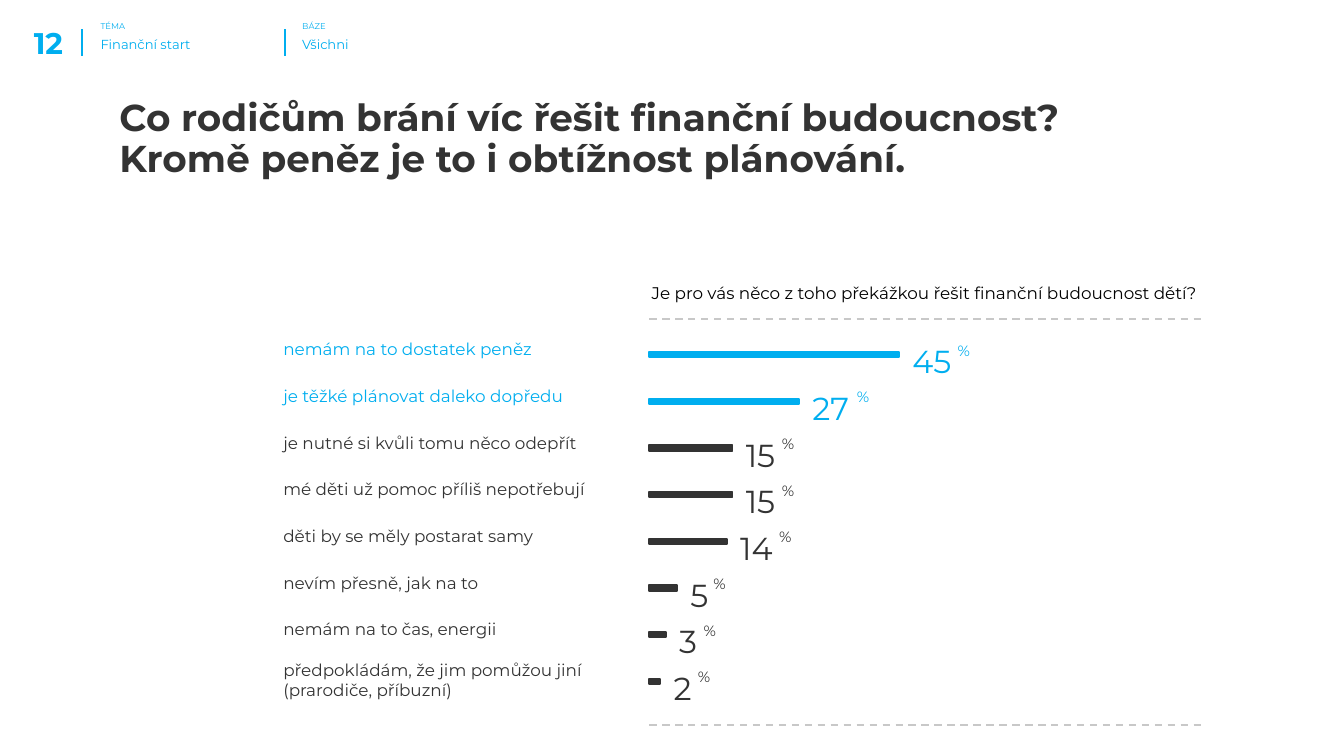
from lxml import etree
from pptx import Presentation
from pptx.dml.color import RGBColor
from pptx.enum import dml, shapes, text
from pptx.oxml.ns import qn
from pptx.util import Pt

BLUE = RGBColor(0x00, 0xAE, 0xEF)
DARK = RGBColor(0x33, 0x33, 0x33)
BLACK = RGBColor(0, 0, 0)
GRAY = RGBColor(0xC8, 0xC8, 0xC8)
FONT = "Montserrat"

# Content
PAGE_NUMBER = "12"
TITLE = ("Co rodičům brání víc řešit finanční budoucnost? "
         "Kromě peněz je to i obtížnost plánování.")
QUESTION = "Je pro vás něco z toho překážkou řešit finanční budoucnost dětí?"
TOPICS = [  # text left, divider left, divider width, caption, value
    (46.8, 43.9, 0.75, "TÉMA", "Finanční start"),
    (154.8, 152.7, 0.7, "BÁZE", "Všichni"),
]
OBSTACLES = [  # label, percent, colour, gap from bar end to percent sign
    ("nemám na to dostatek peněz", 45, BLUE, 24.3),
    ("je těžké plánovat daleko dopředu", 27, BLUE, 23.8),
    ("je nutné si kvůli tomu něco odepřít", 15, DARK, 19.4),
    ("mé děti už pomoc příliš nepotřebují", 15, DARK, 19.4),
    ("děti by se měly postarat samy", 14, DARK, 20.9),
    ("nevím přesně, jak na to", 5, DARK, 12.4),
    ("nemám na to čas, energii", 3, DARK, 13.1),
    ("předpokládám, že jim pomůžou jiní\v(prarodiče, příbuzní)", 2, DARK, 13),
]

# Layout in points
LABEL_LEFT, LABEL_WIDTH = 144.7, 200
BAR_LEFT, BAR_HEIGHT = 347.8, 2.9
FIRST_BAR_TOP, ROW_PITCH = 188.6, 25
POINTS_PER_PERCENT = 2.976
LINE_PITCH = 10.8
RULE_RIGHT = 645.8

presentation = Presentation()
presentation.slide_width, presentation.slide_height = Pt(720), Pt(405)
slide = presentation.slides.add_slide(presentation.slide_layouts[6])


def add_text(content, left, top, width, height, size, color, bold=False):
    box = slide.shapes.add_textbox(Pt(left), Pt(top), Pt(width), Pt(height))
    frame = box.text_frame
    frame.word_wrap = True
    frame.margin_left = frame.margin_right = Pt(7.2)
    frame.margin_top = frame.margin_bottom = Pt(7.2)
    frame.text = content
    paragraph = frame.paragraphs[0]
    paragraph.font.name, paragraph.font.size = FONT, Pt(size)
    paragraph.font.bold = bold
    paragraph.font.color.rgb = color
    return frame


def add_line(x1, y1, x2, y2, color, width, dashed=False):
    line = slide.shapes.add_connector(
        shapes.MSO_CONNECTOR.STRAIGHT, Pt(x1), Pt(y1), Pt(x2), Pt(y2))
    line.line.color.rgb = color
    line.line.width = Pt(width)
    if dashed:
        line.line.dash_style = dml.MSO_LINE.DASH
    properties = line._element.find(qn("p:spPr"))
    etree.SubElement(properties, qn("a:effectLst"))


# Header
number = add_text(PAGE_NUMBER, 0, 0, 33.8, 32.4, 16, BLUE, bold=True)
number.margin_right = number.margin_bottom = 0
number.vertical_anchor = text.MSO_ANCHOR.BOTTOM
number.paragraphs[0].alignment = text.PP_ALIGN.RIGHT
for left, divider, width, caption, value in TOPICS:
    add_line(divider, 15.8, divider, 29.8, BLUE, width)
    add_text(caption, left, 8.6, 45.4, 30.2, 4.5, BLUE)
    add_text(value, left, 15.1, 92, 20.9, 7, BLUE)

# Title and question
title = add_text(TITLE, 56.9, 46.1, 547.9, 91.4, 20, DARK, bold=True)
title.paragraphs[0].line_spacing = 0.9
add_text(QUESTION, 342, 146.2, 330.5, 25.2, 9, BLACK)

# Dashed rules above and below the bars
for y in (170.8, 388.3):
    add_line(BAR_LEFT, y, RULE_RIGHT, y, GRAY, 1, dashed=True)

# One row per obstacle: label, bar, value, percent sign
for row, (label, percent, color, sign_gap) in enumerate(OBSTACLES):
    top = FIRST_BAR_TOP + row * ROW_PITCH
    bar_width = percent * POINTS_PER_PERCENT
    bar_end = BAR_LEFT + bar_width
    extra = label.count("\v") * LINE_PITCH
    add_text(label, LABEL_LEFT, top - 12.5 - extra * 0.45,
             LABEL_WIDTH, 25.2 + extra, 9, color)
    bar = slide.shapes.add_shape(
        shapes.MSO_SHAPE.RECTANGLE,
        Pt(BAR_LEFT), Pt(top), Pt(bar_width), Pt(BAR_HEIGHT))
    bar.shadow.inherit = False
    bar.fill.solid()
    bar.fill.fore_color.rgb = color
    bar.line.color.rgb = color
    bar.line.width = Pt(1)
    add_text(str(percent), bar_end, top - 12.6, 48, 27.4, 17, color)
    add_text("%", bar_end + sign_gap, top - 10.6, 33.1, 20.9, 8, color)

presentation.save("out.pptx")
